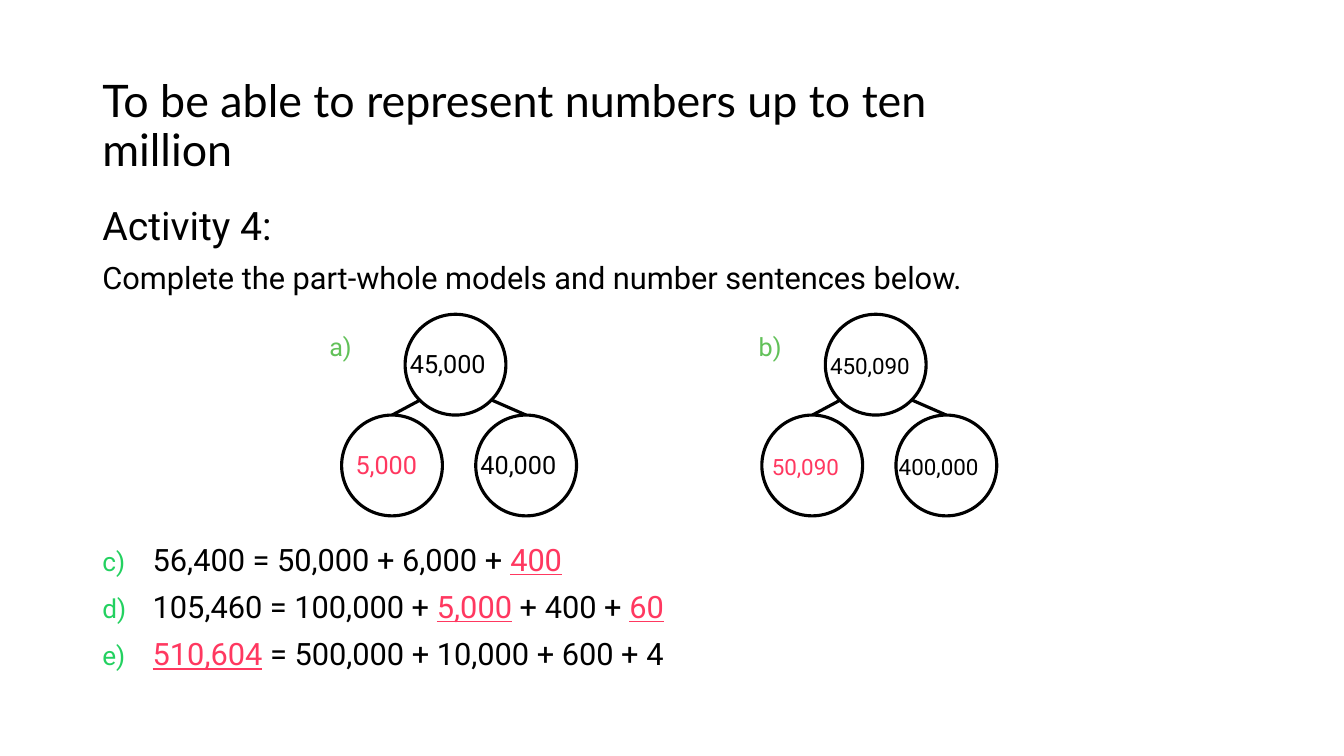
"""Build a slide of part-whole models and number sentences."""
from lxml.etree import SubElement
from pptx import Presentation
from pptx.dml.color import RGBColor
from pptx.enum.shapes import MSO_CONNECTOR, MSO_SHAPE
from pptx.enum.text import MSO_ANCHOR
from pptx.oxml.ns import qn
from pptx.util import Cm, Pt

BLACK, WHITE = "000000", "FFFFFF"
PINK, GREEN, LIME = "FF3860", "62C159", "23D160"
SIDE = 2.54


def color(code):
    """Turn a hex string into a colour."""
    return RGBColor.from_string(code)


def add_box(slide, left, top, width, height):
    """Add an empty wrapping text box and return its frame."""
    box = slide.shapes.add_textbox(Cm(left), Cm(top), Cm(width), Cm(height))
    box.text_frame.word_wrap = True
    return box.text_frame


def add_run(para, text, size, code=BLACK, face="Roboto", under=False):
    """Add one styled run to a paragraph."""
    run = para.add_run()
    run.text = text
    font = run.font
    font.size, font.name = Pt(size), face
    font.color.rgb = color(code)
    if under:
        font.underline = True


def next_para(frame, first):
    """Return the first or a new paragraph with body spacing."""
    para = frame.paragraphs[0] if first else frame.add_paragraph()
    para.line_spacing = 0.9
    if not first:
        para.space_before = Pt(10)
    return para


def add_number(para, start):
    """Give a paragraph a green letter and a hanging indent."""
    props = para._p.get_or_add_pPr()
    props.set("marL", str(Cm(1.27)))
    props.set("indent", str(-Cm(1.27)))
    tint = SubElement(props, qn("a:buClr"))
    SubElement(tint, qn("a:srgbClr"), val=LIME)
    SubElement(props, qn("a:buSzPct"), val="85000")
    SubElement(props, qn("a:buFont"), typeface="Roboto")
    SubElement(props, qn("a:buAutoNum"), type="alphaLcParenR", startAt=str(start))


def add_line(slide, left, top, right, bottom):
    """Add a plain black line."""
    line = slide.shapes.add_connector(
        MSO_CONNECTOR.STRAIGHT, Cm(left), Cm(top), Cm(right), Cm(bottom))
    line.line.color.rgb = color(BLACK)
    line.line.width = Pt(2.25)
    SubElement(line._element.spPr, qn("a:effectLst"))


def add_ring(slide, left, top):
    """Add a white circle with a black outline."""
    ring = slide.shapes.add_shape(
        MSO_SHAPE.OVAL, Cm(left), Cm(top), Cm(SIDE), Cm(SIDE))
    ring.shadow.inherit = False
    ring.fill.solid()
    ring.fill.fore_color.rgb = color(WHITE)
    ring.line.color.rgb = color(BLACK)
    ring.line.width = Pt(2.25)


def add_label(slide, left, top, width, text, size, code):
    """Add a one-line label."""
    frame = add_box(slide, left, top, width, 1)
    add_run(frame.paragraphs[0], text, size, code)


def add_model(slide, left, tag, shift, size, drop, parts):
    """Add a part-whole model; parts hold text, colour and label shift."""
    top = 7.92
    low = top + SIDE
    for start, end in ((1.27, 1.98), (4.65, 3.78)):
        add_line(slide, left + start, low, left + end, top + 2.16)
    spots = ((left + 1.6, top), (left, low), (left + 3.38, low))
    for x, y in spots:
        add_ring(slide, x, y)
    for (x, y), (text, code, move) in zip(spots, parts):
        add_label(slide, x + move, y + drop, 2.9, text, size, code)
    add_label(slide, left + shift, 8.23, 1.2, tag, 18, GREEN)


def add_title(slide, text):
    """Add the slide heading."""
    frame = add_box(slide, 2.33, 1.37, 24.38, 3.68)
    frame.vertical_anchor = MSO_ANCHOR.MIDDLE
    add_run(next_para(frame, True), text, 32, face="Lato")


def add_task(slide):
    """Add the activity name and its instruction."""
    frame = add_box(slide, 2.33, 5.08, 29.21, 2.6)
    add_run(next_para(frame, True), "Activity 4:", 28)
    add_run(next_para(frame, False),
            "Complete the part-whole models and number sentences below.", 22)


def add_sums(slide, sums):
    """Add lettered sums whose answers are pink and underlined."""
    frame = add_box(slide, 2.33, 13.6, 29.21, 3.57)
    for index, runs in enumerate(sums):
        para = next_para(frame, index == 0)
        add_number(para, 3)
        for text, answer in runs:
            add_run(para, text, 22, PINK if answer else BLACK, under=answer)


def main():
    """Build and save the slide."""
    deck = Presentation()
    deck.slide_width, deck.slide_height = Cm(33.87), Cm(19.05)
    slide = deck.slides.add_slide(deck.slide_layouts[6])
    add_task(slide)
    add_title(slide, "To be able to represent numbers up to ten million")
    add_model(slide, 8.61, "a)", -0.56, 18, 0.74, (
        ("45,000", BLACK, -0.13), ("5,000", PINK, 0.1),
        ("40,000", BLACK, -0.13)))
    add_model(slide, 19.2, "b)", -0.33, 16, 0.83, (
        ("450,090", BLACK, -0.13), ("50,090", PINK, 0),
        ("400,000", BLACK, -0.18)))
    add_sums(slide, (
        (("56,400 = 50,000 + 6,000 + ", False), ("400", True)),
        (("105,460 = 100,000 + ", False), ("5,000", True),
         (" + 400 + ", False), ("60", True)),
        (("510,604", True), (" = 500,000 + 10,000 + 600 + 4", False))))
    deck.save("out.pptx")


if __name__ == "__main__":
    main()
